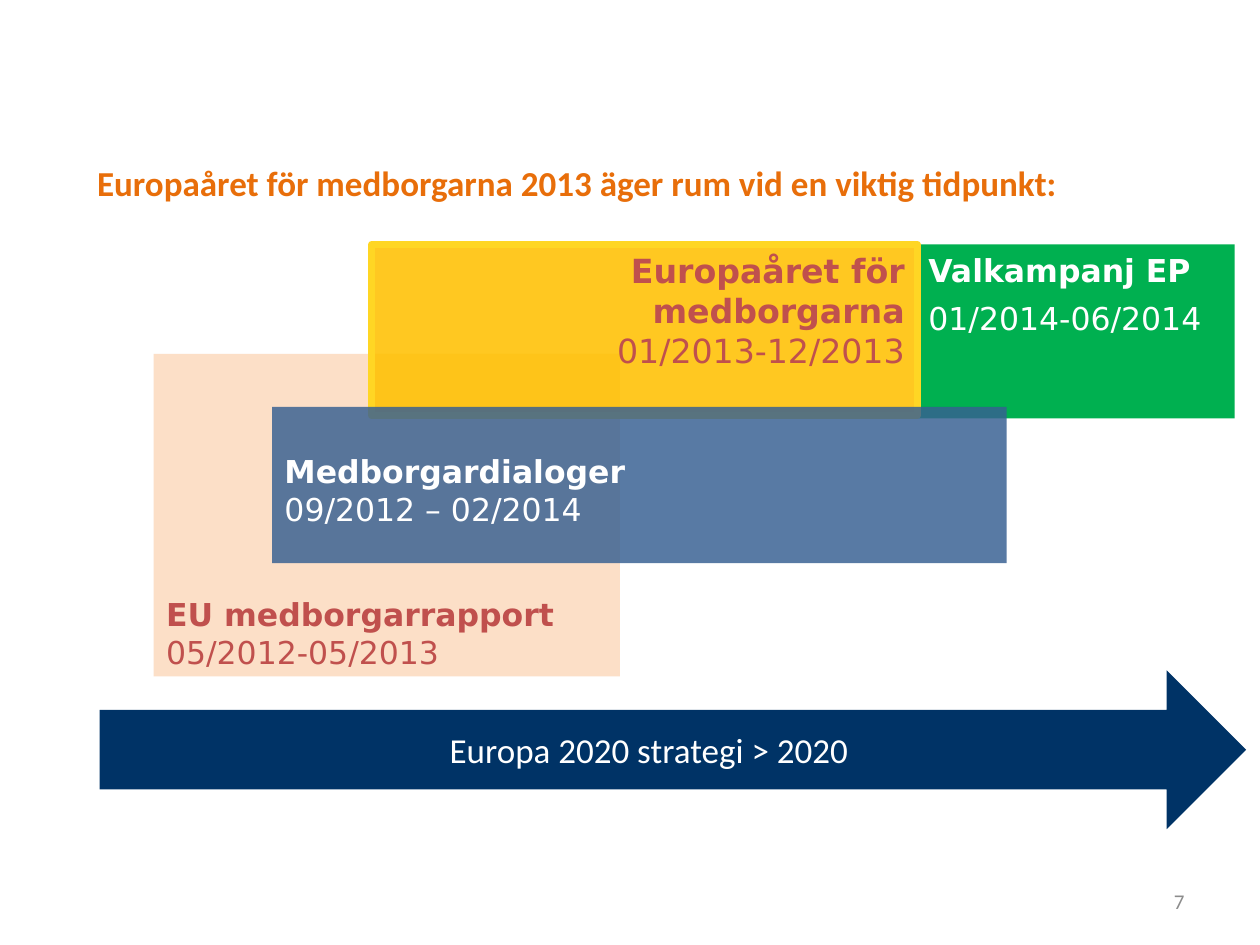
import pptx
import pptx.util
import pptx.dml.color
import pptx.enum.shapes
import pptx.enum.text
import pptx.oxml.ns
from lxml import etree

Inches, Pt = pptx.util.Inches, pptx.util.Pt
SHAPES = pptx.enum.shapes.MSO_SHAPE
ALIGN = pptx.enum.text.PP_ALIGN
ANCHOR = pptx.enum.text.MSO_ANCHOR

# Content: each line is (text, bold)
TITLE = {
    "at": (0.67, 1.23, 8.58, 0.44),
    "lines": [("Europaåret för medborgarna 2013 äger rum vid en viktig tidpunkt:", True)],
    "font": "Calibri", "size": 20, "color": "E86E0A",
}
PAGE_NUMBER = {
    "at": (7.17, 6.95, 2.33, 0.4), "lines": [("7", False)],
    "font": "Calibri", "size": 12, "color": "8C8C8C",
    "align": ALIGN.RIGHT, "anchor": ANCHOR.MIDDLE,
}
# Timeline bars, from back to front
BARS = [
    {"at": (7.27, 1.94, 2.53, 1.38), "fill": "00B050", "color": "FFFFFF", "gap": 6,
     "lines": [("Valkampanj EP", True), ("01/2014-06/2014", False)]},
    {"at": (1.22, 2.81, 3.7, 2.56), "fill": "FCD5B5", "opacity": 75,
     "color": "C0504D", "anchor": ANCHOR.BOTTOM,
     "lines": [("EU medborgarrapport", True), ("05/2012-05/2013", False)]},
    {"at": (0.79, 5.32, 9.1, 1.26), "shape": SHAPES.RIGHT_ARROW, "fill": "003366",
     "color": "FFFFFF", "font": "Calibri", "size": 20,
     "align": ALIGN.CENTER, "anchor": ANCHOR.MIDDLE,
     "lines": [("Europa 2020 strategi > 2020 ", False)]},
    {"at": (2.95, 1.94, 4.33, 1.36), "fill": "FFC000", "opacity": 87,
     "line": "FFD624", "color": "C0504D", "size": 19, "align": ALIGN.RIGHT,
     "lines": [("Europaåret för medborgarna", True), ("01/2013-12/2013", False)]},
    {"at": (2.16, 3.23, 5.83, 1.24), "fill": "376092", "opacity": 83,
     "color": "FFFFFF", "anchor": ANCHOR.MIDDLE, "top_inset": 0.12,
     "lines": [("Medborgardialoger", True), ("09/2012 – 02/2014", False)]},
]


def rgb(value):
    return pptx.dml.color.RGBColor.from_string(value)


def set_attributes(target, values):
    for name, value in values.items():
        setattr(target, name, value)


def place(shape, box):
    names = ("left", "top", "width", "height")
    set_attributes(shape, dict(zip(names, map(Inches, box))))


def write_text(shape, item):
    frame = shape.text_frame
    set_attributes(frame, {
        "word_wrap": True,
        "auto_size": pptx.enum.text.MSO_AUTO_SIZE.NONE,
        "vertical_anchor": item.get("anchor", ANCHOR.TOP),
        "margin_top": Inches(item.get("top_inset", 0.05)),
    })
    for index, (text, bold) in enumerate(item["lines"]):
        paragraph = frame.add_paragraph() if index else frame.paragraphs[0]
        paragraph.text = text
        paragraph.alignment = item.get("align", ALIGN.LEFT)
        paragraph.space_before = Pt(item.get("gap", 0) if index else 0)
        set_attributes(paragraph.font, {
            "name": item.get("font", "DejaVu Sans"),
            "size": Pt(item.get("size", 18)),
            "bold": bold,
        })
        paragraph.font.color.rgb = rgb(item["color"])


def paint(shape, item):
    shape.shadow.inherit = False
    shape.fill.solid()
    shape.fill.fore_color.rgb = rgb(item["fill"])
    if "opacity" in item:
        qn = pptx.oxml.ns.qn
        color = shape.fill._xPr.find(qn("a:solidFill")).find(qn("a:srgbClr"))
        etree.SubElement(color, qn("a:alpha"), val=str(item["opacity"] * 1000))
    if "line" in item:
        shape.line.color.rgb = rgb(item["line"])
        shape.line.width = Pt(4)
    else:
        shape.line.fill.background()


def main():
    presentation = pptx.Presentation()
    presentation.slide_width = Inches(10)
    presentation.slide_height = Inches(7.5)
    slide = presentation.slides.add_slide(presentation.slide_layouts[5])

    # Title
    title = slide.shapes.title
    place(title, TITLE["at"])
    write_text(title, TITLE)

    # Timeline
    for bar in BARS:
        shape = slide.shapes.add_shape(bar.get("shape", SHAPES.RECTANGLE),
                                       *map(Inches, bar["at"]))
        paint(shape, bar)
        write_text(shape, bar)

    # Page number
    number = slide.shapes.add_textbox(*map(Inches, PAGE_NUMBER["at"]))
    write_text(number, PAGE_NUMBER)

    presentation.save("out.pptx")


if __name__ == "__main__":
    main()
